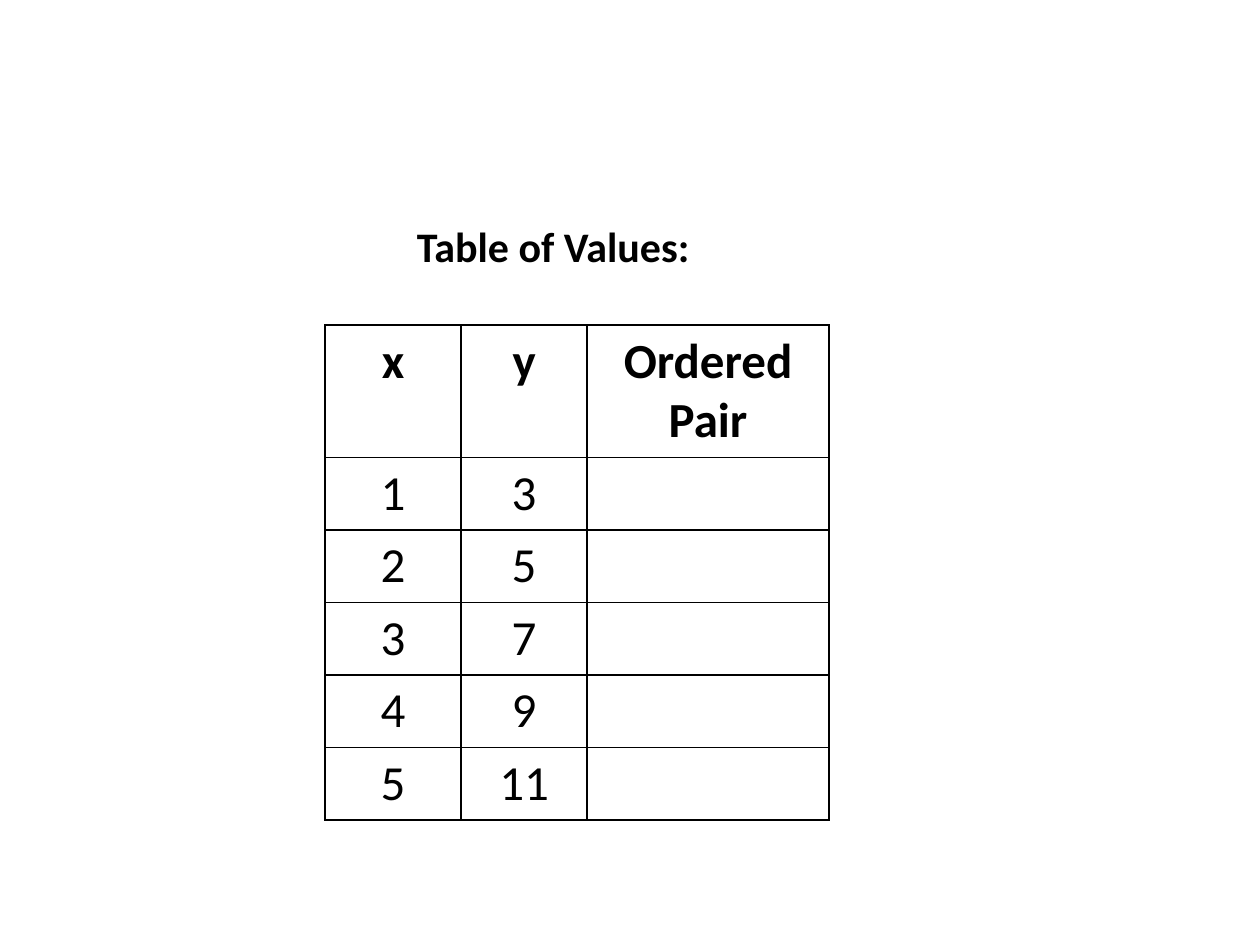
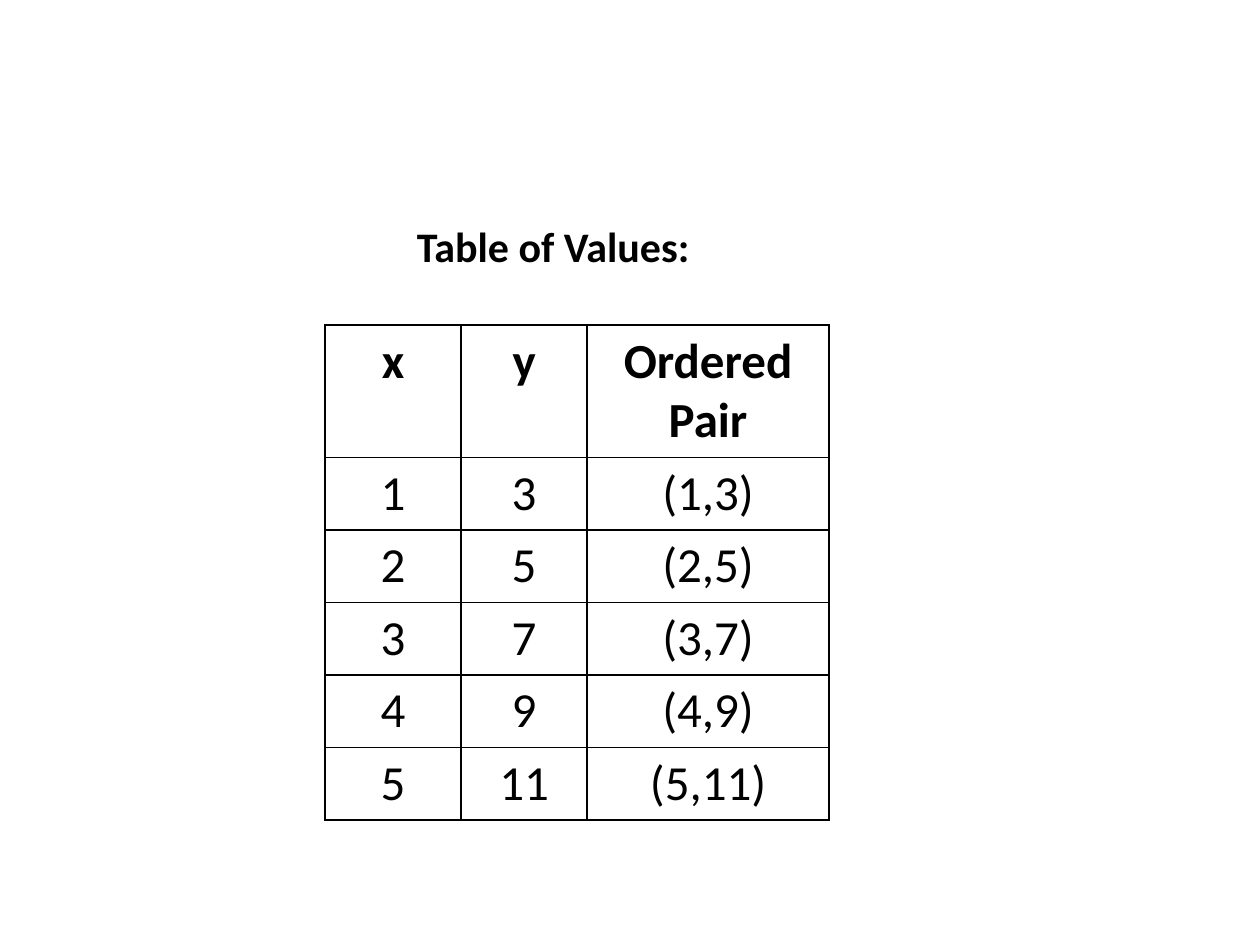
from lxml.etree import SubElement as Sub
from pptx import Presentation
from pptx.dml.color import RGBColor as Rgb
from pptx.enum.shapes import MSO_SHAPE as Kind
from pptx.enum.text import MSO_ANCHOR as Anchor, PP_ALIGN as Align
from pptx.oxml.ns import qn
from pptx.util import Inches, Pt

COLORS = {"ink": "000000", "paper": "FFFFFF"}
HEAD = ("x", "y", "Ordered Pair")
POINTS = [(x, 2 * x + 1) for x in range(1, 6)]


class Deck:
    """Builds slides on a grid of 100 columns and 75 rows."""

    font = "Calibri"
    edge = 1

    def __init__(self):
        self.show = Presentation()
        self.show.slide_width = Inches(10)
        self.show.slide_height = Inches(7.5)
        self.slide = None

    def cols(self, count):
        return round(self.show.slide_width * count / 100)

    def rows(self, count):
        return round(self.show.slide_height * count / 75)

    def new(self):
        self.slide = self.show.slides.add_slide(self.show.slide_layouts[6])

    def label(self, frame, text, size, bold, align):
        frame.text = text
        for para in frame.paragraphs:
            para.alignment = align
            for run in para.runs:
                font = run.font
                font.name, font.size, font.bold = self.font, Pt(size), bold
                font.color.rgb = Rgb.from_string(COLORS["ink"])

    def title(self, text, left, top, width, height):
        box = self.slide.shapes.add_shape(
            Kind.RECTANGLE, self.cols(left), self.rows(top),
            self.cols(width), self.rows(height))
        box.shadow.inherit = False
        box.fill.solid()
        box.fill.fore_color.rgb = Rgb.from_string(COLORS["paper"])
        box.line.fill.background()
        frame = box.text_frame
        frame.word_wrap = True
        frame.vertical_anchor = Anchor.TOP
        frame.margin_top = self.rows(4.6)
        self.label(frame, text, 24, True, Align.LEFT)

    def border(self, cell):
        props = cell._tc.get_or_add_tcPr()
        for spot, side in enumerate(("lnL", "lnR", "lnT", "lnB")):
            line = Sub(props, qn(f"a:{side}"), w=str(Pt(self.edge)))
            fill = Sub(line, qn("a:solidFill"))
            Sub(fill, qn("a:srgbClr"), val=COLORS["ink"])
            props.insert(spot, line)

    def table(self, data, left, top, widths, heights):
        grid = self.slide.shapes.add_table(
            len(data), len(widths), self.cols(left), self.rows(top),
            self.cols(sum(widths)), self.rows(sum(heights))).table
        grid.horz_banding = False
        for col, width in zip(grid.columns, widths):
            col.width = self.cols(width)
        for row, height, texts in zip(grid.rows, heights, data):
            row.height = self.rows(height)
            for cell, text in zip(row.cells, texts):
                cell.fill.background()
                self.border(cell)
                self.label(cell.text_frame, text, 28, texts is HEAD,
                           Align.CENTER)

    def save(self):
        self.show.save("out.pptx")


def main():
    deck = Deck()
    for solved in (False, True):
        deck.new()
        deck.title("Table of Values:", 32.1, 12.9, 27.5, 17.5)
        body = [(str(x), str(y), f"({x},{y})" if solved else "")
                for x, y in POINTS]
        deck.table([HEAD, *body], 25.8, 25.8, (10.8, 10, 19.2),
                   [10.3] + [5.67] * len(body))
    deck.save()


if __name__ == "__main__":
    main()
